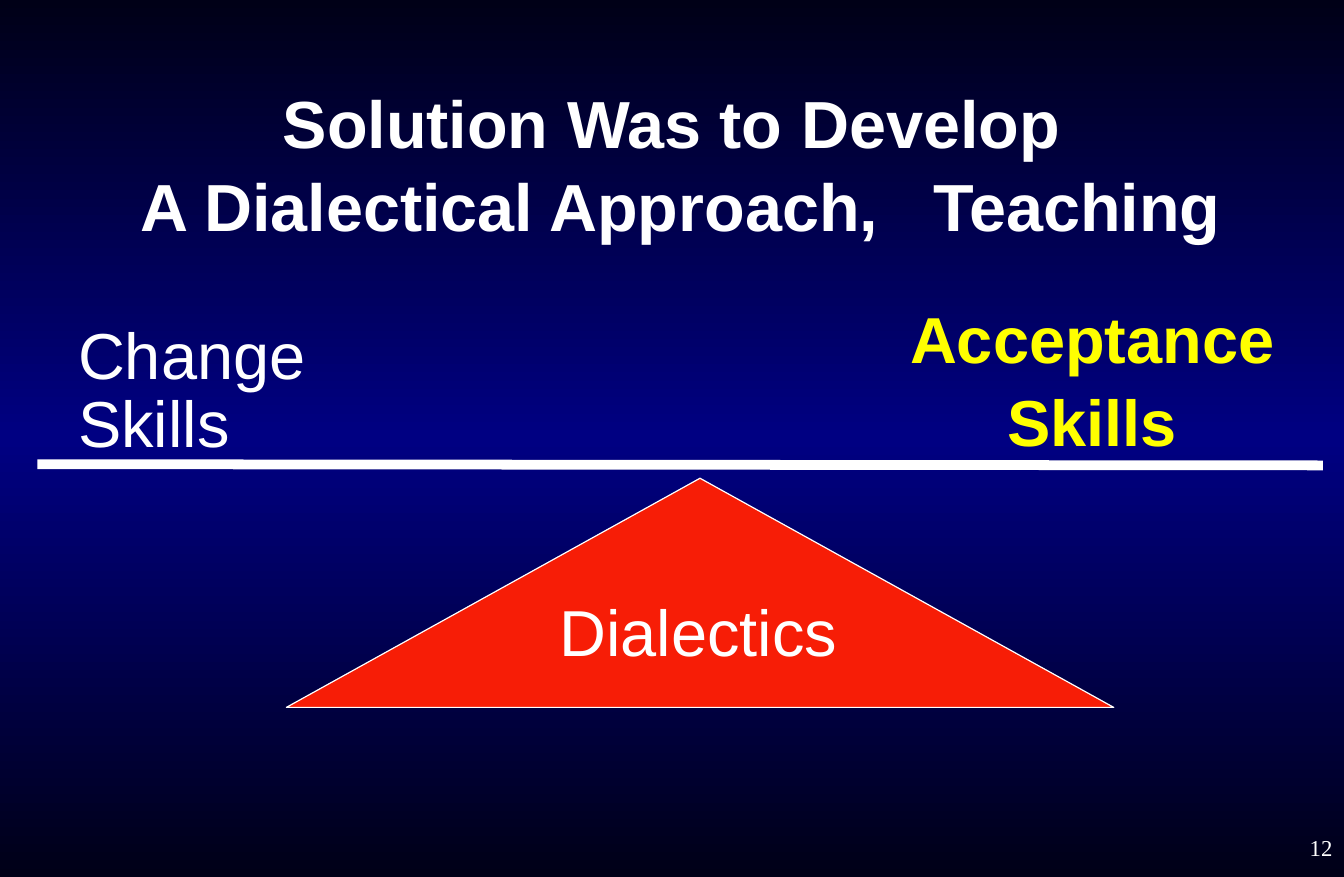
from copy import deepcopy
from dataclasses import dataclass

from lxml.etree import SubElement
from pptx import Presentation
from pptx.dml.color import RGBColor
from pptx.enum.shapes import MSO_CONNECTOR
from pptx.enum.text import MSO_ANCHOR, PP_ALIGN
from pptx.oxml.ns import qn
from pptx.slide import Slide
from pptx.util import Pt

EMU_PER_PX = 9144


@dataclass(frozen=True)
class Theme:
    white: str = "FFFFFF"
    yellow: str = "FFFF00"
    red: str = "F71D06"
    black: str = "000000"
    background: tuple[str, ...] = ("000017", "000082", "000017")
    sans: str = "Arial"
    serif: str = "Times New Roman"
    title_size: int = 41
    label_size: int = 40
    number_size: int = 14


THEME = Theme()


@dataclass(frozen=True)
class Line:
    text: str
    spacing: float = 1.0
    before: int = 0
    indent: int = 0


@dataclass(frozen=True)
class Label:
    left: int
    top: int
    width: int
    height: int
    lines: tuple[Line, ...]
    size: int = THEME.label_size
    color: str = THEME.white
    font: str = THEME.sans
    emphasized: bool = False
    align: PP_ALIGN = PP_ALIGN.LEFT
    anchor: MSO_ANCHOR = MSO_ANCHOR.TOP


LABELS = (
    Label(0, 70, 1150, 136,
          (Line("Solution Was to Develop", 1.05),
           Line("A Dialectical Approach,   Teaching", 1.05, indent=16)),
          size=THEME.title_size, emphasized=True,
          align=PP_ALIGN.CENTER, anchor=MSO_ANCHOR.MIDDLE),
    Label(719, 274, 431, 125,
          (Line("Acceptance", 0.6), Line("Skills", 0.6, before=22)),
          color=THEME.yellow, emphasized=True, align=PP_ALIGN.CENTER),
    Label(57, 282, 349, 111,
          (Line("Change", 0.7), Line("Skills", 0.3, before=24))),
    Label(469, 501, 340, 78, (Line("Dialectics"),)),
    Label(910, 700, 240, 50, (Line("12"),),
          size=THEME.number_size, font=THEME.serif,
          align=PP_ALIGN.RIGHT, anchor=MSO_ANCHOR.MIDDLE),
)


def px(length: int) -> int:
    return length * EMU_PER_PX


def rgb(color: str) -> RGBColor:
    return RGBColor.from_string(color)


def paint_background(slide: Slide) -> None:
    fill = slide.background.fill
    fill.gradient()
    fill.gradient_angle = 270
    stops = slide.element.find(f".//{qn('a:gsLst')}")
    stops.insert(1, deepcopy(stops[0]))
    for index, (stop, color) in enumerate(zip(fill.gradient_stops, THEME.background)):
        stop.position = index / 2
        stop.color.rgb = rgb(color)


def add_text_shadow(run_properties) -> None:
    effects = SubElement(run_properties, qn("a:effectLst"))
    shadow = SubElement(effects, qn("a:outerShdw"),
                        blurRad="38100", dist="38100", dir="2700000")
    SubElement(shadow, qn("a:srgbClr"), val=THEME.black)
    run_properties.find(qn("a:solidFill")).addnext(effects)


def draw_label(slide: Slide, label: Label) -> None:
    box = slide.shapes.add_textbox(
        px(label.left), px(label.top), px(label.width), px(label.height))
    frame = box.text_frame
    frame.word_wrap = True
    frame.vertical_anchor = label.anchor
    frame.text = "\n".join(line.text for line in label.lines)
    for paragraph, line in zip(frame.paragraphs, label.lines):
        paragraph.alignment = label.align
        paragraph.line_spacing = line.spacing
        paragraph.space_before = Pt(line.before)
        if line.indent:
            paragraph._p.get_or_add_pPr().set("marL", str(px(line.indent)))
        run = paragraph.runs[0]
        run.font.size = Pt(label.size)
        run.font.name = label.font
        run.font.bold = label.emphasized
        run.font.color.rgb = rgb(label.color)
        if label.emphasized:
            add_text_shadow(run._r.get_or_add_rPr())


def draw_fulcrum(slide: Slide) -> None:
    outline = slide.shapes.build_freeform(px(599), px(409))
    outline.add_line_segments([(px(953), px(605)), (px(245), px(605))], close=True)
    fulcrum = outline.convert_to_shape()
    fulcrum.shadow.inherit = False
    fulcrum.fill.solid()
    fulcrum.fill.fore_color.rgb = rgb(THEME.red)
    fulcrum.line.color.rgb = rgb(THEME.white)
    fulcrum.line.width = Pt(0.75)


def draw_beam(slide: Slide) -> None:
    beam = slide.shapes.add_connector(
        MSO_CONNECTOR.STRAIGHT, px(32), px(397), px(1132), px(398))
    beam.line.color.rgb = rgb(THEME.white)
    beam.line.width = Pt(6)
    SubElement(beam._element.spPr, qn("a:effectLst"))


def main() -> None:
    presentation = Presentation()
    presentation.slide_width = px(1150)
    presentation.slide_height = px(750)
    slide = presentation.slides.add_slide(presentation.slide_layouts[6])
    paint_background(slide)
    draw_fulcrum(slide)
    draw_beam(slide)
    for label in LABELS:
        draw_label(slide, label)
    presentation.save("out.pptx")


if __name__ == "__main__":
    main()
